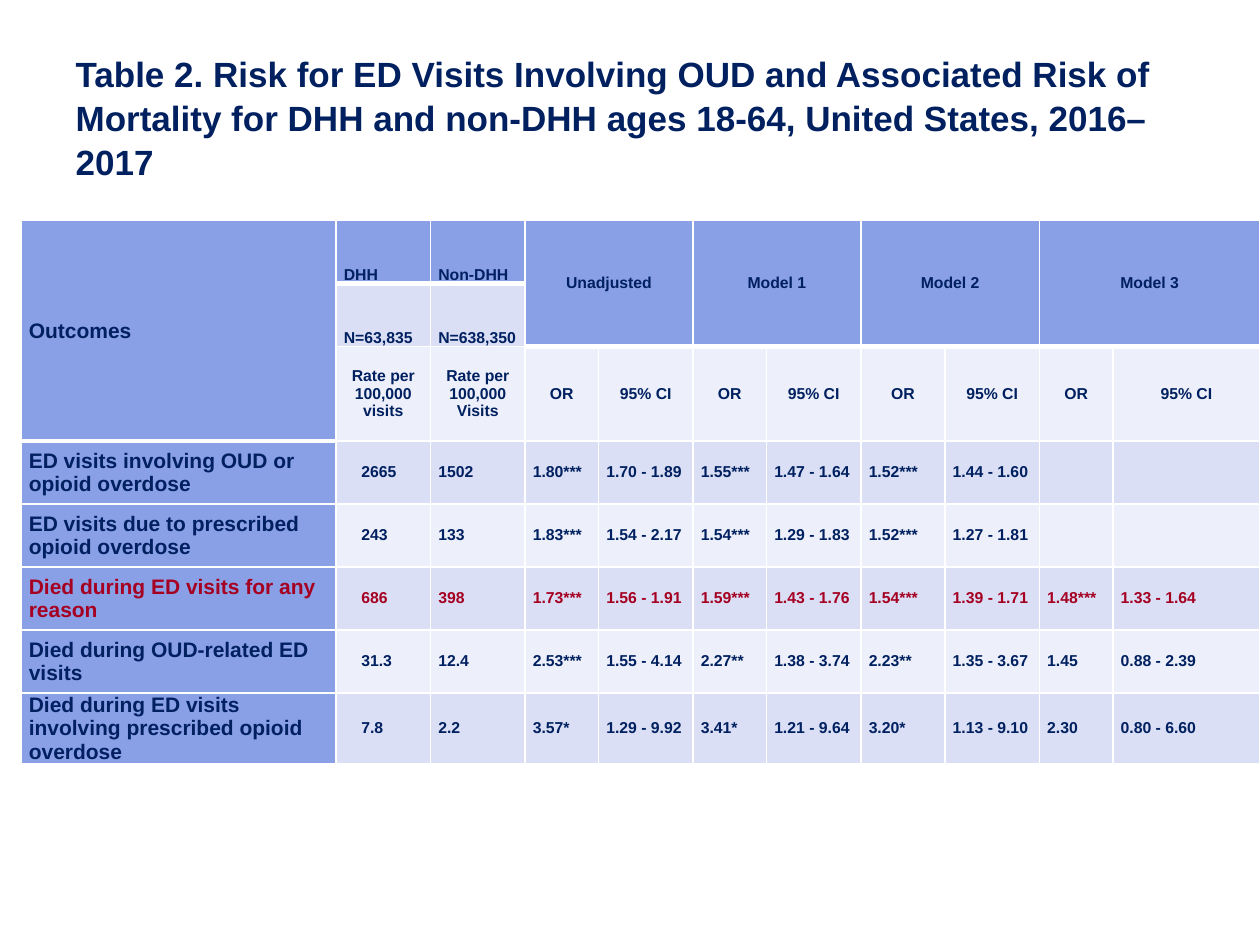
"""Build a slide tabulating ED visit and mortality risk for DHH and non-DHH patients."""
from dataclasses import dataclass

import lxml.etree
import pptx
import pptx.dml.color
import pptx.enum.text
import pptx.oxml.ns
import pptx.util

Pt = pptx.util.Pt
ALIGN = pptx.enum.text.PP_ALIGN
ANCHOR = pptx.enum.text.MSO_ANCHOR
COLORS = {"navy": "002060", "red": "A50021", "white": "FFFFFF",
          "header": "8AA0E6", "band": "DADFF5", "light": "EDF0FA"}
FONT = "Arial"
TITLE = ("Table 2. Risk for ED Visits Involving OUD and Associated Risk of Mortality "
         "for DHH and non-DHH ages 18-64, United States, 2016–2017")
COLUMN_WIDTHS = [180, 54, 54, 42, 54, 42, 54, 48, 54, 42, 84]
ROW_HEIGHTS = [36, 36, 54] + [36] * 5
MODELS = ["Unadjusted", "Model 1", "Model 2", "Model 3"]
THICK_BOTTOMS = {(0, 1), (0, 2), (2, 0)} | {(1, column) for column in range(3, 11)}


@dataclass
class Entry:
    row: int
    column: int
    text: str
    size: float = 9
    color: str = "navy"
    align: ALIGN = ALIGN.LEFT
    anchor: ANCHOR = ANCHOR.MIDDLE
    indent: float = 0


@dataclass
class Outcome:
    label: str
    values: list[str]
    color: str = "navy"


OUTCOMES = [
    Outcome("ED visits involving OUD or opioid overdose",
            ["2665", "1502", "1.80***", "1.70 - 1.89", "1.55***", "1.47 - 1.64",
             "1.52***", "1.44 - 1.60"]),
    Outcome("ED visits due to prescribed opioid overdose",
            ["243", "133", "1.83***", "1.54 - 2.17", "1.54***", "1.29 - 1.83",
             "1.52***", "1.27 - 1.81"]),
    Outcome("Died during ED visits for any reason",
            ["686", "398", "1.73***", "1.56 - 1.91", "1.59***", "1.43 - 1.76",
             "1.54***", "1.39 - 1.71", "1.48***", "1.33 - 1.64"], "red"),
    Outcome("Died during OUD-related ED visits",
            ["31.3", "12.4", "2.53***", "1.55 - 4.14", "2.27**", "1.38 - 3.74",
             "2.23**", "1.35 - 3.67", "1.45", "0.88 - 2.39"]),
    Outcome("Died during ED visits involving prescribed opioid overdose",
            ["7.8", "2.2", "3.57*", "1.29 - 9.92", "3.41*", "1.21 - 9.64",
             "3.20*", "1.13 - 9.10", "2.30", "0.80 - 6.60"]),
]


def add_run(paragraph, text: str, size: float, color: str) -> None:
    """Append one bold run to a paragraph."""
    run = paragraph.add_run()
    run.text = text
    run.font.name = FONT
    run.font.size = Pt(size)
    run.font.bold = True
    run.font.color.rgb = pptx.dml.color.RGBColor.from_string(COLORS[color])


def add_title(slide) -> None:
    """Place and fill the title placeholder."""
    title = slide.shapes.title
    title.left, title.top, title.width, title.height = Pt(36), Pt(21.6), Pt(648), Pt(90)
    frame = title.text_frame
    frame.word_wrap = True
    frame.auto_size = pptx.enum.text.MSO_AUTO_SIZE.NONE
    frame.vertical_anchor = ANCHOR.MIDDLE
    paragraph = frame.paragraphs[0]
    paragraph.alignment = ALIGN.LEFT
    paragraph.line_spacing = 1.05
    add_run(paragraph, TITLE, 20, "navy")


def set_borders(cell, row: int, column: int) -> None:
    """Draw white cell borders, thicker below the header cells."""
    properties = cell._tc.get_or_add_tcPr()
    thick_top = (row - 1, column) in THICK_BOTTOMS
    thick_bottom = row == 0 or (row, column) in THICK_BOTTOMS
    widths = {"L": 1, "R": 1, "T": 3 if thick_top else 1, "B": 3 if thick_bottom else 1}
    qn = pptx.oxml.ns.qn
    for side, width in widths.items():
        line = lxml.etree.SubElement(properties, qn(f"a:ln{side}"), w=str(int(Pt(width))))
        fill = lxml.etree.SubElement(line, qn("a:solidFill"))
        lxml.etree.SubElement(fill, qn("a:srgbClr"), val=COLORS["white"])


def style_cell(cell, row: int, column: int) -> None:
    """Set the borders, fill and margins of a cell."""
    set_borders(cell, row, column)
    shade = "header" if row == 0 or column == 0 else "band" if row % 2 else "light"
    cell.fill.solid()
    cell.fill.fore_color.rgb = pptx.dml.color.RGBColor.from_string(COLORS[shade])
    cell.margin_left = cell.margin_right = Pt(4.5)
    cell.margin_top = cell.margin_bottom = Pt(0)


def write_entry(table, entry: Entry) -> None:
    """Write one entry into its cell, one paragraph per line."""
    cell = table.cell(entry.row, entry.column)
    cell.vertical_anchor = entry.anchor
    frame = cell.text_frame
    for number, line in enumerate(entry.text.split("\n")):
        paragraph = frame.add_paragraph() if number else frame.paragraphs[0]
        paragraph.alignment = entry.align
        if entry.indent:
            paragraph._p.get_or_add_pPr().set("indent", str(int(Pt(entry.indent))))
        add_run(paragraph, line, entry.size, entry.color)


def header_entries() -> list[Entry]:
    """List the entries of the three header rows."""
    entries = [Entry(0, 0, "Outcomes", 12)]
    groups = [("DHH", "N=63,835", "visits"), ("Non-DHH", "N=638,350", "Visits")]
    for column, (group, count, unit) in enumerate(groups, 1):
        entries += [
            Entry(0, column, group, anchor=ANCHOR.BOTTOM),
            Entry(1, column, count, anchor=ANCHOR.BOTTOM),
            Entry(2, column, f"Rate per 100,000\n{unit}", align=ALIGN.CENTER),
        ]
    for number, model in enumerate(MODELS):
        column = 3 + 2 * number
        entries += [
            Entry(0, column, model, align=ALIGN.CENTER),
            Entry(2, column, "OR", align=ALIGN.CENTER),
            Entry(2, column + 1, "95% CI", align=ALIGN.CENTER),
        ]
    return entries


def outcome_entries() -> list[Entry]:
    """List the entries of the outcome rows."""
    entries = []
    for row, outcome in enumerate(OUTCOMES, 3):
        entries.append(Entry(row, 0, outcome.label, 12, outcome.color))
        for column, value in enumerate(outcome.values, 1):
            indent = 10 if column == 1 else 0
            entries.append(Entry(row, column, value, color=outcome.color, indent=indent))
    return entries


def add_risk_table(slide) -> None:
    """Add the table with merged headers and all entries."""
    table = slide.shapes.add_table(
        len(ROW_HEIGHTS), len(COLUMN_WIDTHS), Pt(12), Pt(126),
        Pt(sum(COLUMN_WIDTHS)), Pt(sum(ROW_HEIGHTS))).table
    for column, width in zip(table.columns, COLUMN_WIDTHS):
        column.width = Pt(width)
    for row, height in zip(table.rows, ROW_HEIGHTS):
        row.height = Pt(height)
    for row in range(len(ROW_HEIGHTS)):
        for column in range(len(COLUMN_WIDTHS)):
            style_cell(table.cell(row, column), row, column)
    table.cell(0, 0).merge(table.cell(2, 0))
    for column in range(3, 11, 2):
        table.cell(0, column).merge(table.cell(1, column + 1))
    for entry in header_entries() + outcome_entries():
        write_entry(table, entry)


def main() -> None:
    """Build and save the presentation."""
    presentation = pptx.Presentation()
    presentation.slide_width, presentation.slide_height = Pt(720), Pt(540)
    slide = presentation.slides.add_slide(presentation.slide_layouts[5])
    add_title(slide)
    add_risk_table(slide)
    presentation.save("out.pptx")


if __name__ == "__main__":
    main()
